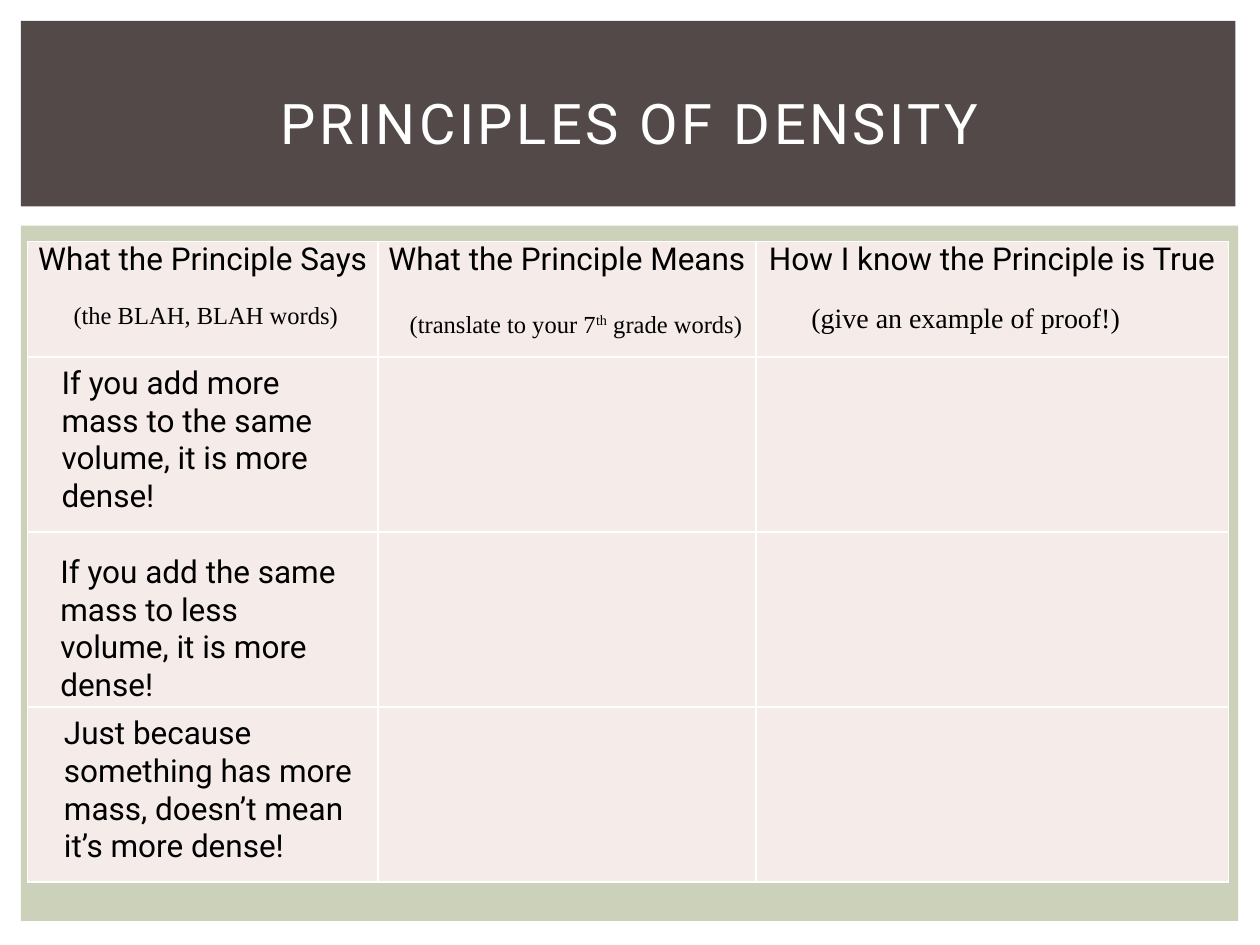
import pptx
import pptx.util
import pptx.dml.color
import pptx.enum.shapes
import pptx.enum.text
import pptx.oxml
import pptx.oxml.ns

Pt = pptx.util.Pt
RGBColor = pptx.dml.color.RGBColor
PP_ALIGN = pptx.enum.text.PP_ALIGN
MSO_ANCHOR = pptx.enum.text.MSO_ANCHOR

WHITE = RGBColor(0xFF, 0xFF, 0xFF)
BLACK = RGBColor(0, 0, 0)
BROWN = RGBColor(0x53, 0x49, 0x49)
SAGE = RGBColor(0xCC, 0xD1, 0xB9)
BLUSH = RGBColor(0xF5, 0xEB, 0xE9)

COLUMN_WIDTHS = [200.2, 216, 270]
ROW_HEIGHTS = [66.1, 100, 100, 100]
HEADINGS = ["What the Principle Says", "What the Principle Means",
            "How I know the Principle is True"]
# left, top, width, height, size, runs as (text, baseline in thousandths of a percent)
HINTS = [
    (30.2, 167.8, 175, 24.2, 14, [("(the BLAH, BLAH words)", 0)]),
    (221.8, 172.8, 214.6, 24.2, 14,
     [("(translate to your 7", 0), ("th", 30000), (" grade words)", 0)]),
    (455.8, 168.5, 192.2, 26.6, 16, [("(give an example of proof!)", 0)]),
]
# left, top, width, text
PRINCIPLES = [
    (28.1, 203.8, 175, "If you add more mass to the same volume, it is more dense!"),
    (27.4, 311.8, 180, "If you add the same mass to less volume, it is more dense!"),
    (29.5, 403.9, 180, "Just because something has more mass, doesn’t mean it’s more dense!"),
]


class SlideBuilder:
    body_font = "Roboto"
    hint_font = "Times New Roman"
    body_size = 18

    def __init__(self, slide):
        self.slide = slide

    def add_run(self, paragraph, text, size, font, color=BLACK):
        run = paragraph.add_run()
        run.text = text
        run.font.size = Pt(size)
        run.font.name = font
        run.font.bold = False
        run.font.color.rgb = color
        return run

    def panel(self, left, top, width, height, color):
        shape = self.slide.shapes.add_shape(
            pptx.enum.shapes.MSO_SHAPE.RECTANGLE, Pt(left), Pt(top), Pt(width), Pt(height))
        shape.shadow.inherit = False
        shape.fill.solid()
        shape.fill.fore_color.rgb = color
        shape.line.fill.background()

    def title(self, left, top, width, height, text):
        title = self.slide.shapes.title
        title.left, title.top, title.width, title.height = map(Pt, (left, top, width, height))
        self.slide.shapes._spTree.append(title._element)  # bring to the front
        frame = title.text_frame
        frame.vertical_anchor = MSO_ANCHOR.MIDDLE
        paragraph = frame.paragraphs[0]
        paragraph.alignment = PP_ALIGN.CENTER
        run = self.add_run(paragraph, text, 32, self.body_font, WHITE)
        run.font._element.set("spc", "200")

    def text_box(self, left, top, width, height, runs, size, font, alignment=PP_ALIGN.LEFT):
        box = self.slide.shapes.add_textbox(Pt(left), Pt(top), Pt(width), Pt(height))
        box.text_frame.word_wrap = True
        paragraph = box.text_frame.paragraphs[0]
        paragraph.alignment = alignment
        for text, baseline in runs:
            run = self.add_run(paragraph, text, size, font)
            if baseline:
                run.font._element.set("baseline", str(baseline))

    def cell_borders(self, cell):
        properties = cell._tc.get_or_add_tcPr()
        for index, side in enumerate(("lnL", "lnR", "lnT", "lnB")):
            properties.insert(index, pptx.oxml.parse_xml(
                f'<a:{side} {pptx.oxml.ns.nsdecls("a")} w="12700"><a:solidFill>'
                f'<a:srgbClr val="{WHITE}"/></a:solidFill></a:{side}>'))

    def table(self, left, top, column_widths, row_heights, headings):
        table = self.slide.shapes.add_table(
            len(row_heights), len(column_widths), Pt(left), Pt(top),
            Pt(sum(column_widths)), Pt(sum(row_heights))).table
        table.first_row = table.horz_banding = False
        for column, width in zip(table.columns, column_widths):
            column.width = Pt(width)
        for row, height in zip(table.rows, row_heights):
            row.height = Pt(height)
        for cell in table.iter_cells():
            cell.fill.solid()
            cell.fill.fore_color.rgb = BLUSH
            cell.margin_left = cell.margin_right = Pt(5)
            cell.margin_top = cell.margin_bottom = Pt(0)
            self.cell_borders(cell)
        for column, heading in enumerate(headings):
            paragraph = table.cell(0, column).text_frame.paragraphs[0]
            paragraph.alignment = PP_ALIGN.CENTER
            self.add_run(paragraph, heading, self.body_size, self.body_font)


def main():
    presentation = pptx.Presentation()
    presentation.slide_width, presentation.slide_height = Pt(720), Pt(540)
    slide = presentation.slides.add_slide(presentation.slide_layouts.get_by_name("Title Only"))
    builder = SlideBuilder(slide)

    builder.panel(12, 128.9, 695.5, 397.4, SAGE)
    builder.panel(12, 12, 694, 106, BROWN)
    builder.table(15.8, 138, COLUMN_WIDTHS, ROW_HEIGHTS, HEADINGS)
    builder.title(30, 28, 660, 83, "PRINCIPLES OF DENSITY")
    for left, top, width, height, size, runs in HINTS:
        builder.text_box(left, top, width, height, runs, size, builder.hint_font,
                         PP_ALIGN.CENTER)
    for left, top, width, text in PRINCIPLES:
        builder.text_box(left, top, width, 94.3, [(text, 0)], builder.body_size,
                         builder.body_font)

    presentation.save("out.pptx")


if __name__ == "__main__":
    main()
